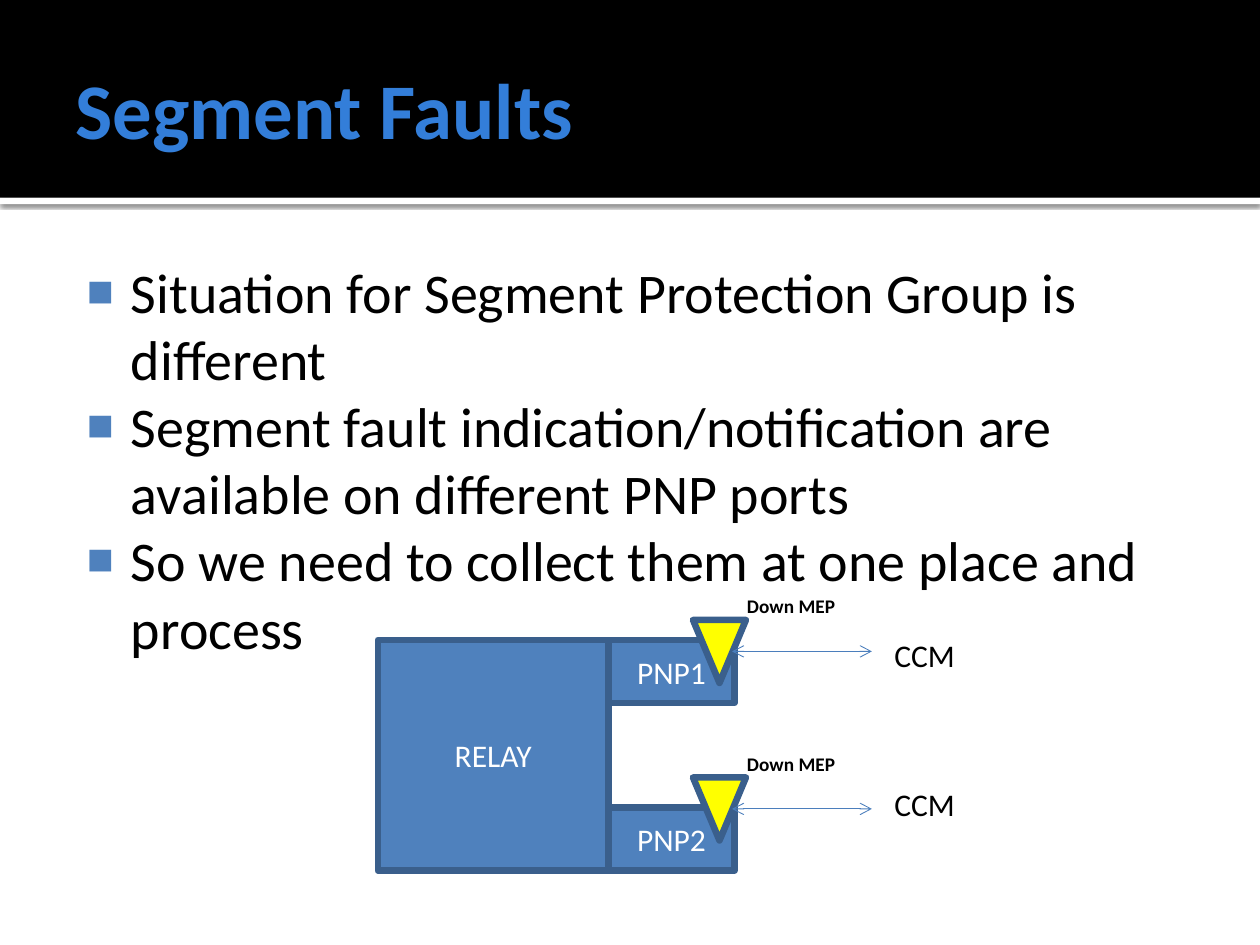
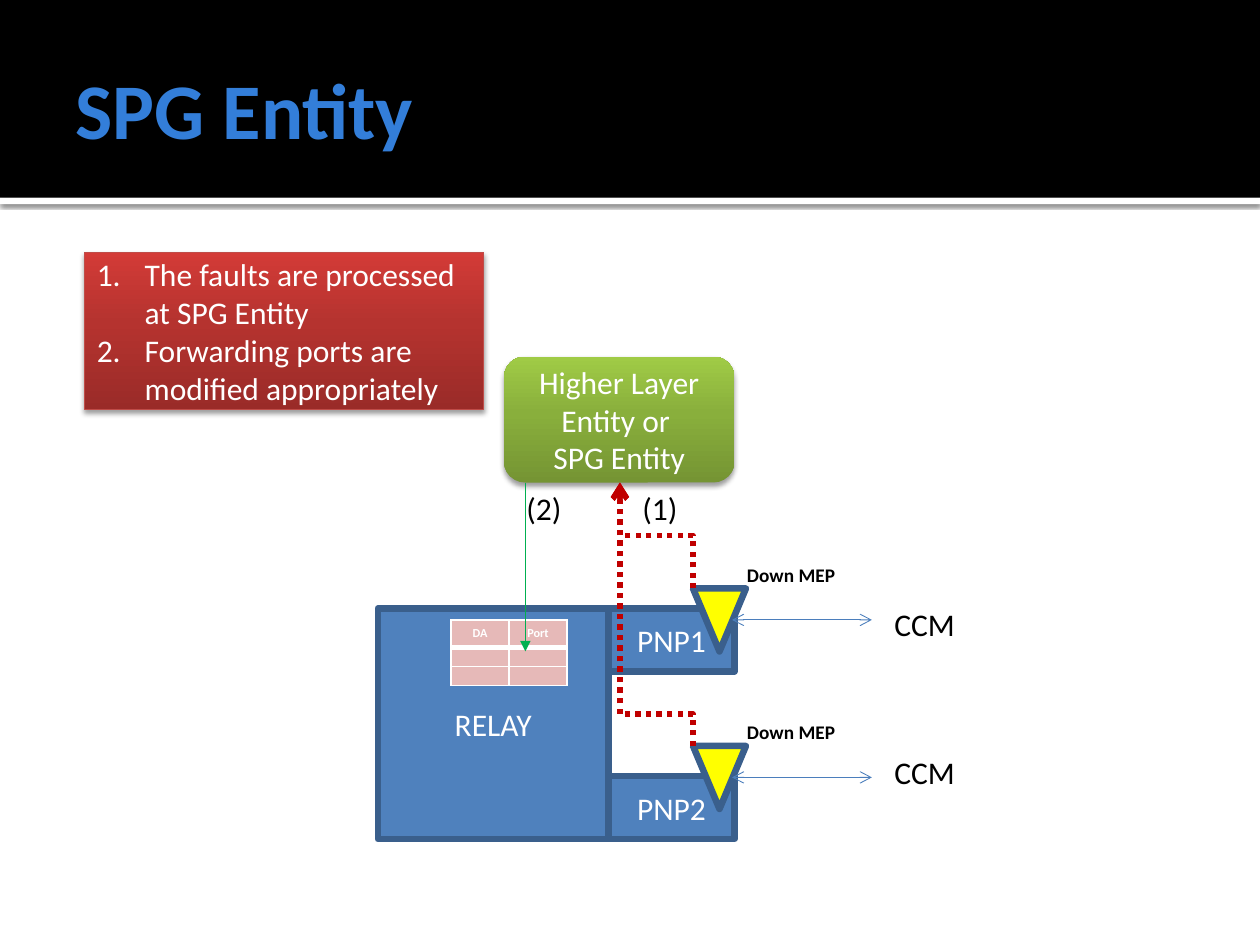
"""Build two slides on segment faults and the SPG entity."""
from lxml import etree
from pptx import Presentation
from pptx.dml.color import RGBColor
from pptx.enum.dml import MSO_LINE
from pptx.enum.shapes import MSO_CONNECTOR as Link, MSO_SHAPE as Preset
from pptx.enum.text import MSO_ANCHOR as Anchor, MSO_AUTO_SIZE as AutoSize, PP_ALIGN as Align
from pptx.oxml.ns import qn
from pptx.util import Inches, Pt

FONT = "Calibri"
BLACK, WHITE, TITLE_BLUE = "000000", "FFFFFF", "337ED9"
BLUE, EDGE_BLUE, ARROW_BLUE = "4F81BD", "3A5F8C", "4B7EBC"
YELLOW, DARK_RED, GREEN, PINK = "FFFF00", "C00000", "00B050", "E6B9B8"
GREEN_BLEND = ((0, "759433"), (55, "89AF3C"), (100, "A0CB46"))
RED_BLEND = ((0, "9A2B28"), (55, "B5332F"), (100, "D33B37"))
SQUARE = (("buClr", BLUE), ("buSzPct", {"val": "80000"}),
          ("buFont", {"typeface": "Arial"}), ("buChar", {"char": "■"}))
NUMBER = (("buFont", {"typeface": FONT}), ("buAutoNum", {"type": "arabicPeriod"}))


def write(frame, text, size=18, color=BLACK, bold=False, align=Align.LEFT,
          anchor=Anchor.TOP, wrap=True, grow=False, bullet=(), indent=0,
          margins=(0.1, 0.05, 0.1, 0.05)):
    """Fill a text frame, one paragraph for each line of text."""
    frame.auto_size = AutoSize.SHAPE_TO_FIT_TEXT if grow else AutoSize.NONE
    frame.word_wrap = wrap
    frame.vertical_anchor = anchor
    (frame.margin_left, frame.margin_top,
     frame.margin_right, frame.margin_bottom) = map(Inches, margins)
    for index, line in enumerate(text.split("\n")):
        paragraph = frame.add_paragraph() if index else frame.paragraphs[0]
        paragraph.alignment = align
        if bullet:
            properties = paragraph._p.get_or_add_pPr()
            properties.set("marL", str(Inches(indent)))
            properties.set("indent", str(-Inches(indent if bullet is NUMBER else 0.35)))
            for tag, value in bullet:
                if tag == "buClr":
                    holder = etree.SubElement(properties, qn("a:buClr"))
                    etree.SubElement(holder, qn("a:srgbClr"), val=value)
                else:
                    etree.SubElement(properties, qn(f"a:{tag}"), value)
        run = paragraph.add_run()
        run.text = line
        run.font.name, run.font.size, run.font.bold = FONT, Pt(size), bold
        run.font.color.rgb = RGBColor.from_string(color)


def paint(shape, fill=None, line=None, width=0.5, dash=None, head=None, tail=None, shadow=None):
    """Set fill, line, arrowheads and shadow of a shape or connector."""
    if isinstance(fill, tuple):
        shape.fill.gradient()
        shape.fill.gradient_angle = 90
        stops = shape.element.spPr.find(".//" + qn("a:gsLst"))
        stops[:] = []
        for position, color in fill:
            stop = etree.SubElement(stops, qn("a:gs"), pos=str(position * 1000))
            etree.SubElement(stop, qn("a:srgbClr"), val=color)
    elif fill:
        shape.fill.solid()
        shape.fill.fore_color.rgb = RGBColor.from_string(fill)
    if line:
        shape.line.color.rgb = RGBColor.from_string(line)
        shape.line.width = Pt(width)
        if dash:
            shape.line.dash_style = dash
        for tag, kind in (("headEnd", head), ("tailEnd", tail)):
            if kind:
                etree.SubElement(shape.element.spPr.find(qn("a:ln")), qn(f"a:{tag}"), type=kind)
    else:
        shape.line.fill.background()
    effects = etree.SubElement(shape.element.spPr, qn("a:effectLst"))
    if shadow:
        alpha, blur, distance = shadow
        outer = etree.SubElement(effects, qn("a:outerShdw"), blurRad=str(Pt(blur)),
                                 dist=str(Pt(distance)), dir="5400000", rotWithShape="0")
        tint = etree.SubElement(outer, qn("a:srgbClr"), val=BLACK)
        etree.SubElement(tint, qn("a:alpha"), val=str(alpha * 1000))


presentation = Presentation()
presentation.slide_width, presentation.slide_height = Inches(10), Inches(7.5)

for title_text, relay_top in (("Segment Faults", 5.08), ("SPG Entity", 4.83)):
    slide = presentation.slides.add_slide(presentation.slide_layouts[5])
    shapes = slide.shapes
    strip = shapes.add_shape(Preset.RECTANGLE, 0, Inches(1.57), Inches(10), Inches(0.05))
    paint(strip, WHITE, shadow=(60, 2.5, 0.8))
    band = shapes.add_shape(Preset.RECTANGLE, 0, 0, Inches(10), Inches(1.57))
    paint(band, BLACK)
    title = shapes.title
    title.left, title.top, title.width, title.height = map(Inches, (0.5, 0.17, 9, 1.37))
    write(title.text_frame, title_text, size=45, color=TITLE_BLUE, bold=True,
          anchor=Anchor.MIDDLE, margins=(0.1, 0.05, 0.05, 0.05))
    title.element.getparent().append(title.element)

    if title_text == "Segment Faults":
        body = shapes.add_textbox(*map(Inches, (0.5, 1.94, 9, 5.06)))
        write(body.text_frame,
              "Situation for Segment Protection Group is different\n"
              "Segment fault indication/notification are available on different PNP ports\n"
              "So we need to collect them at one place and process",
              size=32, bullet=SQUARE, indent=0.48, margins=(0.06, 0.1, 0.1, 0.05))

    for name, left, top, width, height in (
            ("RELAY", 3, relay_top, 1.83, 1.83),
            ("PNP1", 4.83, relay_top, 1, 0.5),
            ("PNP2", 4.83, relay_top + 1.33, 1, 0.5)):
        block = shapes.add_shape(Preset.RECTANGLE, *map(Inches, (left, top, width, height)))
        paint(block, BLUE, EDGE_BLUE, 3.78)
        write(block.text_frame, name, color=WHITE, align=Align.CENTER, anchor=Anchor.MIDDLE)

    for port in range(2):
        mep_top = relay_top - 0.16 + 1.25 * port
        mep = shapes.add_shape(Preset.ISOSCELES_TRIANGLE,
                               *map(Inches, (5.5, mep_top, 0.42, 0.5)))
        mep.rotation = 180
        paint(mep, YELLOW, EDGE_BLUE, 3.78)
        arrow = shapes.add_connector(
            Link.STRAIGHT, *map(Inches, (5.81, mep_top + 0.25, 6.92, mep_top + 0.25)))
        paint(arrow, line=ARROW_BLUE, head="arrow", tail="arrow")
        ccm = shapes.add_textbox(
            *map(Inches, (7, relay_top - 0.08 + 1.18 * port, 0.69, 0.4)))
        write(ccm.text_frame, "CCM", wrap=False, grow=True)
        mep_label = shapes.add_textbox(*map(Inches, (5.83, mep_top - 0.25, 0.91, 0.29)))
        write(mep_label.text_frame, "Down MEP", size=11, bold=True, wrap=False, grow=True)

entity = shapes.add_shape(Preset.ROUNDED_RECTANGLE, *map(Inches, (4, 2.83, 1.83, 1)))
paint(entity, GREEN_BLEND, shadow=(38, 3.1, 2))
write(entity.text_frame, "Higher Layer Entity or \nSPG Entity", color=WHITE,
      align=Align.CENTER, anchor=Anchor.MIDDLE)

entity_bottom, mep_x, entity_x = 3.83, 5.5, 4.92
for start_y, bend in ((4.67, 50000), (5.92, 12100)):
    center_x, center_y = (mep_x + entity_x) / 2, (start_y + entity_bottom) / 2
    half_run, half_spread = (start_y - entity_bottom) / 2, (mep_x - entity_x) / 2
    fault_path = shapes.add_connector(Link.ELBOW, *map(Inches, (
        center_x - half_run, center_y + half_spread,
        center_x + half_run, center_y - half_spread)))
    fault_path.element.spPr.find(qn("a:xfrm")).set("rot", "16200000")
    guides = fault_path.element.spPr.find(".//" + qn("a:avLst"))
    etree.SubElement(guides, qn("a:gd"), name="adj1", fmla=f"val {bend}")
    paint(fault_path, line=DARK_RED, width=3, dash=MSO_LINE.ROUND_DOT, tail="arrow")

steps = shapes.add_shape(Preset.RECTANGLE, *map(Inches, (0.67, 2, 3.17, 1.25)))
paint(steps, RED_BLEND, "BF4C48", shadow=(38, 3.1, 2))
write(steps.text_frame,
      "The faults are processed at SPG Entity\nForwarding ports are modified appropriately",
      color=WHITE, anchor=Anchor.MIDDLE, bullet=NUMBER, indent=0.38)

table_frame = shapes.add_table(3, 2, *map(Inches, (3.58, 4.92, 0.92, 0.52)))
forwarding = table_frame.table
for row, height in zip(forwarding.rows, (0.22, 0.15, 0.15)):
    row.height = Inches(height)
for row_index, labels in enumerate((("DA", "Port"), ("", ""), ("", ""))):
    for column_index, label in enumerate(labels):
        cell = forwarding.cell(row_index, column_index)
        cell.margin_left = cell.margin_right = cell.margin_top = cell.margin_bottom = 0
        cell.vertical_anchor = Anchor.MIDDLE
        paragraph = cell.text_frame.paragraphs[0]
        paragraph.alignment = Align.CENTER
        if label:
            run = paragraph.add_run()
            run.text = label
            run.font.name, run.font.size, run.font.bold = FONT, Pt(7), True
            run.font.color.rgb = RGBColor.from_string(WHITE)
        etree.SubElement(paragraph._p, qn("a:endParaRPr"), sz="700")
        properties = cell._tc.get_or_add_tcPr()
        for side in "LRTB":
            thick = (side, row_index) in (("B", 0), ("T", 1))
            border = etree.SubElement(properties, qn(f"a:ln{side}"), w=str(Pt(3 if thick else 1)))
            border_fill = etree.SubElement(border, qn("a:solidFill"))
            etree.SubElement(border_fill, qn("a:srgbClr"), val=WHITE)
        cell.fill.solid()
        cell.fill.fore_color.rgb = RGBColor.from_string(PINK)

update_arrow = shapes.add_connector(Link.STRAIGHT, *map(Inches, (4.17, 3.83, 4.17, 5.17)))
paint(update_arrow, line=GREEN, tail="triangle")
for step, left in (("(1)", 5), ("(2)", 4.08)):
    step_label = shapes.add_textbox(*map(Inches, (left, 3.83, 0.48, 0.4)))
    write(step_label.text_frame, step, wrap=False, grow=True)

presentation.save("out.pptx")
